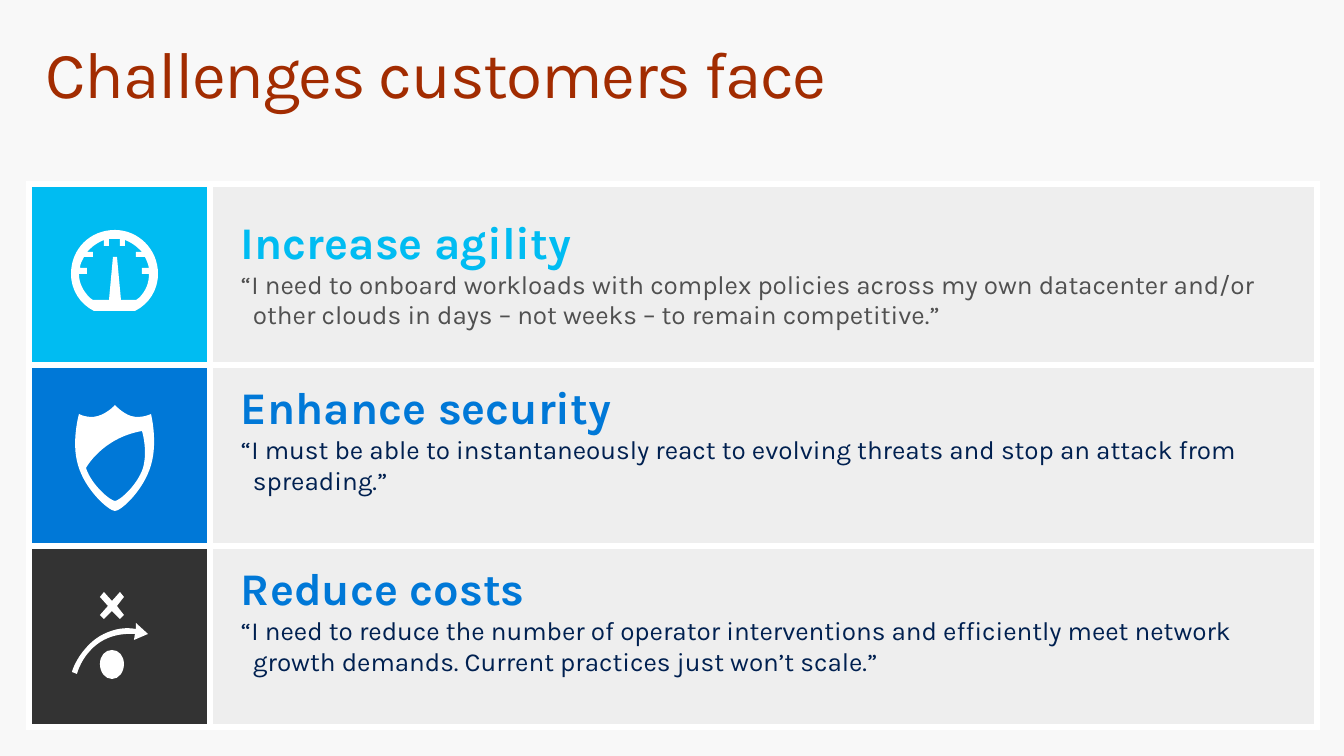
"""Build the slide of three customer challenges with an icon beside each quote."""
from lxml.etree import SubElement
from pptx import Presentation
from pptx.dml.color import RGBColor
from pptx.enum.text import MSO_ANCHOR
from pptx.oxml import parse_xml
from pptx.oxml.ns import nsdecls, qn
from pptx.util import Pt

PX = 9255
FONT = "Karla"


def color(value):
    return RGBColor.from_string(value)


def draw_icon(shapes, contours):
    """Draw white contours; pairs are corners and sextuples are cubic curves."""
    builder = shapes.build_freeform(*contours[0][0], scale=PX)
    for start, *segments in contours:
        if start != contours[0][0]:
            builder.move_to(*start)
        builder.add_line_segments([segment[-2:] for segment in segments], close=True)
    icon = builder.convert_to_shape()
    icon.shadow.inherit = False
    icon.fill.solid()
    icon.fill.fore_color.rgb = color("FFFFFF")
    icon.line.fill.background()

    left, top = round(icon.left / PX), round(icon.top / PX)
    segments = [segment for contour in contours for segment in contour[1:]]
    lines = list(icon._element.iter(qn("a:lnTo")))
    for line, segment in zip(lines, segments):
        if len(segment) == 6:
            curve = parse_xml(f'<a:cubicBezTo {nsdecls("a")}/>')
            for x, y in zip(segment[::2], segment[1::2]):
                SubElement(curve, qn("a:pt"), x=str(x - left), y=str(y - top))
            line.getparent().replace(line, curve)


deck = Presentation()
deck.slide_width, deck.slide_height = 1344 * PX, 756 * PX
page = deck.slides.add_slide(deck.slide_layouts[6])
page.background.fill.solid()
page.background.fill.fore_color.rgb = color("F8F8F8")

title_box = page.shapes.add_textbox(30 * PX, 32 * PX, 1284 * PX, 99 * PX)
frame = title_box.text_frame
frame.word_wrap = True
frame.margin_left = frame.margin_right = 16 * PX
frame.margin_top = frame.margin_bottom = 10 * PX
frame.text = "Challenges customers face"
para = frame.paragraphs[0]
para.line_spacing = 0.9
span = para.runs[0]
span.font.name, span.font.size = FONT, Pt(48)
span.font.color.rgb = color("A22C01")
span.font._element.set("spc", "-100")

challenges = [
    ("Increase agility",
     "“I need to onboard workloads with complex policies across my own datacenter "
     "and/or other clouds in days – not weeks – to remain competitive.”",
     "00BCF2", "00BCF2", "505050", 5),
    ("Enhance security",
     "“I must be able to instantaneously react to evolving threats and stop an attack "
     "from spreading.”",
     "0078D7", "0078D7", "002050", 36),
    ("Reduce costs",
     "“I need to reduce the number of operator interventions and efficiently meet "
     "network growth demands. Current practices just won’t scale.”",
     "333333", "0078D7", "002050", 36),
]

table = page.shapes.add_table(3, 2, 29 * PX, 184 * PX, 1288 * PX, 543 * PX).table
table.first_row = table.horz_banding = False
table.columns[0].width, table.columns[1].width = 181 * PX, 1107 * PX

for index, (heading, quote, tile, heading_color, quote_color, bottom) in enumerate(challenges):
    table.rows[index].height = 181 * PX
    icon_cell, text_cell = table.cell(index, 0), table.cell(index, 1)
    for cell, fill in ((icon_cell, tile), (text_cell, "EEEEEE")):
        cell.fill.solid()
        cell.fill.fore_color.rgb = color(fill)
        properties = cell._tc.get_or_add_tcPr()
        for position, side in enumerate(("lnL", "lnR", "lnT", "lnB")):
            border = parse_xml(f'<a:{side} {nsdecls("a")} w="{Pt(4.5)}"/>')
            line_fill = SubElement(border, qn("a:solidFill"))
            SubElement(line_fill, qn("a:srgbClr"), val="FFFFFF")
            properties.insert(position, border)

    text_cell.vertical_anchor = MSO_ANCHOR.MIDDLE
    text_cell.margin_left, text_cell.margin_right = 31 * PX, 41 * PX
    text_cell.margin_top, text_cell.margin_bottom = 5 * PX, bottom * PX
    frame = text_cell.text_frame
    frame.text = f"{heading}\n{quote}"
    styles = ((33, True, heading_color), (19, False, quote_color))
    for para, (size, bold, text_color) in zip(frame.paragraphs, styles):
        font = para.runs[0].font
        font.name, font.size, font.bold = FONT, Pt(size), bold
        font.color.rgb = color(text_color)
    quote_properties = frame.paragraphs[1]._p.get_or_add_pPr()
    quote_properties.set("marL", str(12 * PX))
    quote_properties.set("indent", str(-12 * PX))

gauge = [
    [(115, 230), (138, 230, 158, 249, 158, 274), (158, 290, 149, 304, 135, 311),
     (94, 311), (80, 304, 71, 290, 71, 274), (71, 249, 90, 230, 115, 230)],
    [(139, 298), (146, 291, 149, 283, 149, 274), (142, 274), (142, 268), (149, 268),
     (148, 264, 147, 261, 145, 257), (136, 257), (136, 252), (142, 252),
     (141, 251, 140, 250, 139, 249), (135, 245, 130, 242, 125, 240),
     (125, 246), (120, 246), (120, 239), (118, 239, 117, 239, 115, 239),
     (113, 239, 111, 239, 109, 239), (109, 246), (104, 246), (104, 240),
     (99, 242, 94, 245, 90, 249), (89, 250, 88, 251, 87, 252), (93, 252), (93, 257),
     (84, 257), (82, 261, 80, 264, 80, 268), (87, 268), (87, 274), (79, 274),
     (79, 283, 83, 291, 90, 298), (91, 299, 92, 299, 93, 300), (109, 300),
     (113, 257), (117, 257), (121, 300), (136, 300), (137, 299, 138, 299, 139, 298)],
]
shield = [
    [(151, 414), (151, 414, 141, 419, 131, 416), (122, 413, 115, 405, 115, 405),
     (115, 405, 108, 413, 98, 416), (88, 419, 79, 414, 79, 414),
     (79, 414, 71, 442, 78, 465), (85, 490, 109, 511, 115, 511),
     (121, 511, 144, 490, 151, 465), (158, 442, 151, 414, 151, 414)],
    [(143, 468), (137, 486, 119, 501, 115, 501), (111, 501, 92, 486, 86, 468),
     (86, 468, 102, 438, 142, 431), (142, 431, 148, 450, 143, 468)],
]
ball_cross_and_arrow = [
    [(124, 664), (124, 672, 119, 679, 112, 679), (105, 679, 100, 672, 100, 664),
     (100, 656, 105, 650, 112, 650), (119, 650, 124, 656, 124, 664)],
    [(124, 615), (117, 606), (124, 597), (120, 592), (112, 601), (104, 592),
     (100, 597), (108, 606), (100, 615), (104, 619), (112, 611), (120, 619)],
    [(148, 634), (136, 623), (136, 629), (125, 627, 115, 629, 106, 633),
     (99, 636, 92, 641, 86, 648), (76, 659, 72, 671, 72, 672), (77, 674),
     (77, 674, 80, 662, 89, 652), (101, 638, 117, 633, 135, 634), (134, 640)],
]
for contours in (gauge, shield, ball_cross_and_arrow):
    draw_icon(page.shapes, contours)

deck.save("out.pptx")
